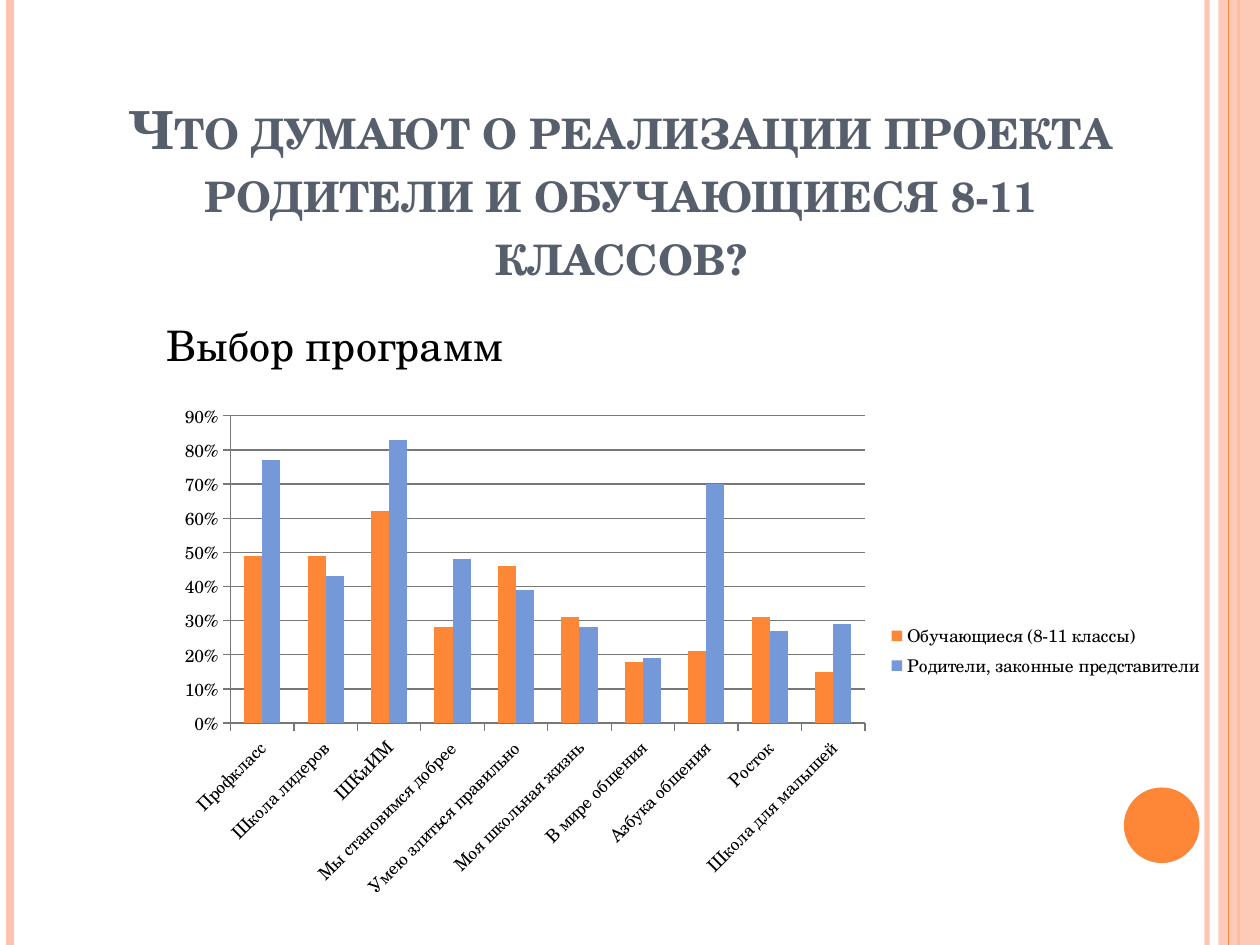
from lxml.etree import SubElement
from pptx import Presentation
from pptx.chart.data import CategoryChartData
from pptx.dml.color import RGBColor
from pptx.enum.chart import XL_CHART_TYPE, XL_LEGEND_POSITION, XL_TICK_MARK
from pptx.enum.shapes import MSO_CONNECTOR, MSO_SHAPE
from pptx.enum.text import MSO_ANCHOR, PP_ALIGN
from pptx.oxml.ns import qn
from pptx.util import Inches, Pt

WIDTH, HEIGHT = 10, 7.5
FONT = "TeX Gyre Schola"
COLORS = {"peach": "FEC3AE", "orange": "FE8637", "blue": "7598D9",
          "slate": "575F6D", "black": "000000", "grid": "777777"}

TITLE = "Что думают о реализации проекта родители и обучающиеся 8-11 классов?"
SUBTITLE = "Выбор программ"
STUDENTS = "Обучающиеся (8-11 классы)"
PARENTS = "Родители, законные представители"
SERIES_COLORS = ["orange", "blue"]
PROGRAMS = [
    ("Профкласс", 0.49, 0.77),
    ("Школа лидеров", 0.49, 0.43),
    ("ШКиИМ", 0.62, 0.83),
    ("Мы становимся добрее", 0.28, 0.48),
    ("Умею злиться правильно", 0.46, 0.39),
    ("Моя школьная жизнь", 0.31, 0.28),
    ("В мире общения", 0.18, 0.19),
    ("Азбука общения", 0.21, 0.7),
    ("Росток", 0.31, 0.27),
    ("Школа для малышей", 0.15, 0.29),
]
STRIPES_BEHIND = [(9.58, "peach", 3, 93), (0.08, "peach", 4.5, 100), (9.83, "orange", 1.5, 100)]
STRIPES_FRONT = [(9.75, "orange", 0.75, 100)]
BAND_LEFT = 9.67


def rgb(name):
    return RGBColor.from_string(COLORS[name])


def set_opacity(element, percent):
    color = element.find(".//" + qn("a:srgbClr"))
    SubElement(color, qn("a:alpha"), val=str(percent * 1000))


def add_stripes(slide, stripes):
    for x, color, weight, opacity in stripes:
        stripe = slide.shapes.add_connector(
            MSO_CONNECTOR.STRAIGHT, Inches(x), 0, Inches(x), Inches(HEIGHT))
        stripe.line.color.rgb = rgb(color)
        stripe.line.width = Pt(weight)
        properties = stripe.element.spPr
        if opacity < 100:
            set_opacity(properties, opacity)
        SubElement(properties, qn("a:effectLst"))


def add_decoration(slide, preset, box, color, opacity=100):
    decoration = slide.shapes.add_shape(preset, *map(Inches, box))
    decoration.shadow.inherit = False
    decoration.fill.solid()
    decoration.fill.fore_color.rgb = rgb(color)
    decoration.line.fill.background()
    if opacity < 100:
        set_opacity(decoration.element.spPr, opacity)


def add_text(slide, text, box, size, color, bold=False, small_caps=False,
             align=PP_ALIGN.LEFT, anchor=MSO_ANCHOR.TOP):
    frame = slide.shapes.add_textbox(*map(Inches, box)).text_frame
    frame.word_wrap = True
    frame.vertical_anchor = anchor
    paragraph = frame.paragraphs[0]
    paragraph.alignment = align
    run = paragraph.add_run()
    run.text = text
    run.font.name = FONT
    run.font.size = Pt(size)
    run.font.bold = bold
    run.font.color.rgb = rgb(color)
    if small_caps:
        run.font._element.set("cap", "small")


def add_program_chart(slide, box):
    programs, students, parents = zip(*PROGRAMS)
    data = CategoryChartData(number_format="0%")
    data.categories = programs
    data.add_series(STUDENTS, students)
    data.add_series(PARENTS, parents)
    chart = slide.shapes.add_chart(
        XL_CHART_TYPE.COLUMN_CLUSTERED, *map(Inches, box), data).chart
    chart.has_title = False
    chart.font.name = FONT
    chart.font.size = Pt(10)
    chart.font.color.rgb = rgb("black")
    chart.has_legend = True
    chart.legend.position = XL_LEGEND_POSITION.RIGHT
    chart.legend.include_in_layout = False

    bars = chart.plots[0]
    bars.gap_width = 150
    bars.overlap = 0
    bars.vary_by_categories = False
    for series, color in zip(bars.series, SERIES_COLORS):
        series.format.fill.solid()
        series.format.fill.fore_color.rgb = rgb(color)

    shares = chart.value_axis
    shares.minimum_scale, shares.maximum_scale, shares.major_unit = 0, 0.9, 0.1
    shares.has_major_gridlines = True
    shares.tick_labels.number_format = "0%"
    shares.tick_labels.number_format_is_linked = False
    for axis in (chart.category_axis, shares):
        axis.major_tick_mark = XL_TICK_MARK.OUTSIDE
        axis.minor_tick_mark = XL_TICK_MARK.NONE
    for part in (chart.category_axis, shares, shares.major_gridlines):
        part.format.line.color.rgb = rgb("grid")
        part.format.line.width = Pt(0.75)

    chart.category_axis.tick_labels.font.size = Pt(10)
    label_body = chart.category_axis._element.find(qn("c:txPr")).find(qn("a:bodyPr"))
    label_body.set("rot", str(-45 * 60000))


def main():
    deck = Presentation()
    deck.slide_width, deck.slide_height = Inches(WIDTH), Inches(HEIGHT)
    slide = deck.slides.add_slide(deck.slide_layouts[6])
    add_stripes(slide, STRIPES_BEHIND)
    add_decoration(slide, MSO_SHAPE.RECTANGLE,
                   (BAND_LEFT, 0, WIDTH - BAND_LEFT, HEIGHT), "peach", opacity=87)
    add_stripes(slide, STRIPES_FRONT)
    add_decoration(slide, MSO_SHAPE.OVAL, (8.92, 6.25, 0.6, 0.6), "orange")
    add_text(slide, TITLE, (0.83, 0.29, 8.2, 2.03), 30, "slate", bold=True,
             small_caps=True, align=PP_ALIGN.CENTER, anchor=MSO_ANCHOR.BOTTOM)
    add_text(slide, SUBTITLE, (1.22, 2.49, 8.59, 0.94), 24, "black")
    add_program_chart(slide, (1.3, 3.12, 8.35, 4.09))
    deck.save("out.pptx")


if __name__ == "__main__":
    main()
